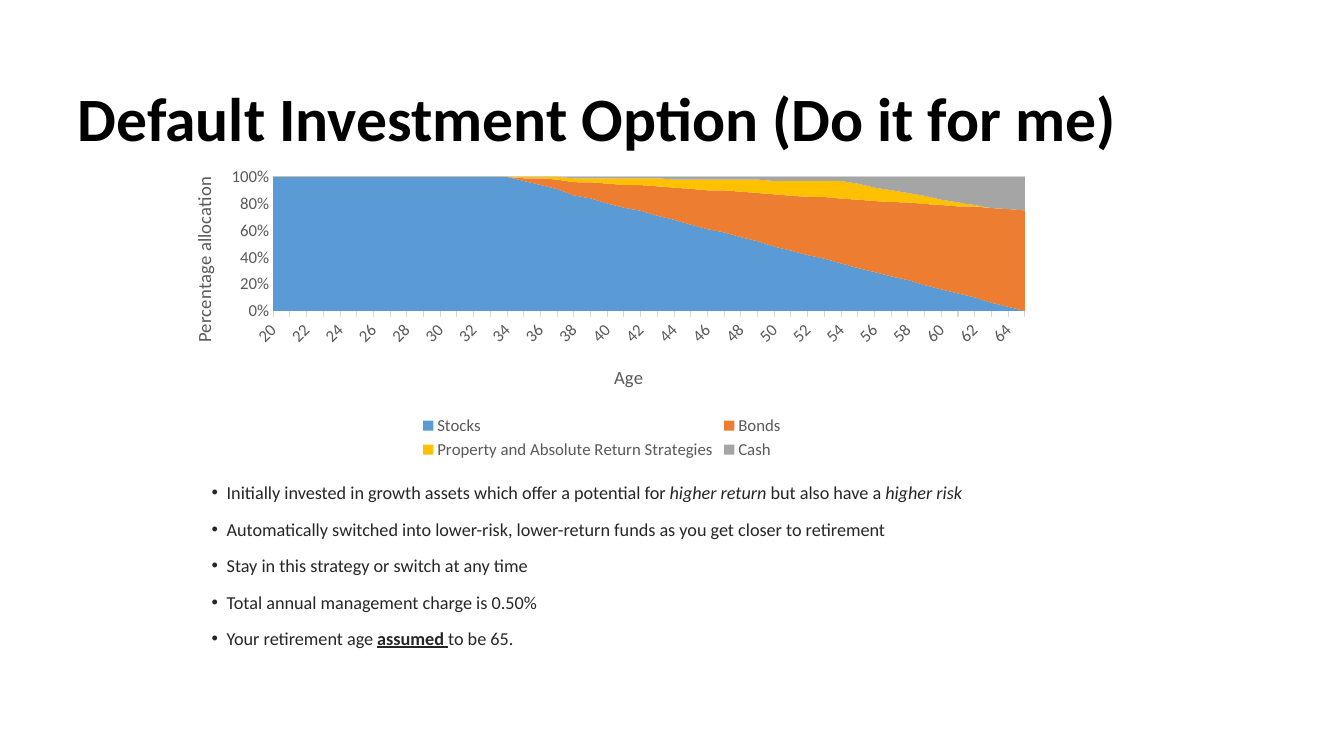
"""Build the default investment option slide: title, allocation chart and bullets."""
from lxml import etree
from pptx import Presentation
from pptx.chart.data import CategoryChartData as Data
from pptx.dml.color import RGBColor
from pptx.enum.chart import XL_CHART_TYPE as Kind, XL_LEGEND_POSITION as Spot, XL_TICK_MARK as Tick
from pptx.enum.text import MSO_ANCHOR as Anchor, MSO_AUTO_SIZE as Fit, PP_ALIGN as Align
from pptx.oxml import parse_xml
from pptx.oxml.ns import nsdecls, qn
from pptx.util import Inches, Pt


def style(font, size, color, bold=False):
    """Set the face, size, colour and weight of a font."""
    font.name, font.size, font.bold = "Calibri", Pt(size), bold
    font.color.rgb = RGBColor.from_string(color)


def place(node, index, **share):
    """Fix a chart part at shares of the chart's size."""
    for old in node.findall(qn("c:layout")):
        node.remove(old)
    inner = '<c:layoutTarget val="inner"/>' if "w" in share else ""
    modes = "".join(f'<c:{key}Mode val="edge"/>' for key in share if key in "xy")
    sizes = "".join(f'<c:{key} val="{val}"/>' for key, val in share.items())
    node.insert(index, parse_xml(
        f'<c:layout {nsdecls("c")}><c:manualLayout>{inner}{modes}{sizes}</c:manualLayout></c:layout>'))


deck = Presentation()
deck.slide_width, deck.slide_height = Inches(13.33), Inches(7.5)
slide = deck.slides.add_slide(deck.slide_layouts[5])

title = slide.shapes.title
title.left, title.top, title.width, title.height = map(Inches, (0.67, 0.83, 12, 0.52))
frame = title.text_frame
frame.auto_size, frame.vertical_anchor, frame.word_wrap = Fit.NONE, Anchor.TOP, True
para = frame.paragraphs[0]
para.alignment, para.line_spacing = Align.LEFT, 0.9
run = para.add_run()
run.text = "Default Investment Option (Do it for me)"
style(run.font, 44, "000000", True)

funds = [
    ("Stocks", "5B9BD5", [100] * 15 + [
        97, 94, 90, 87, 84, 81, 77, 74, 71, 68, 65, 61, 58, 55, 52, 48,
        45, 42, 39, 35, 32, 29, 26, 23, 19, 16, 13, 10, 6, 3, 0]),
    ("Bonds", "ED7D31", [0] * 15 + [
        2, 5, 7, 10, 12, 15, 17, 19, 22, 24, 27, 29, 31, 34, 36, 39,
        41, 44, 46, 48, 51, 53, 56, 58, 60, 63, 65, 68, 70, 73, 75]),
    ("Property and Absolute Return Strategies", "FFC000", [0] * 15 + [
        1, 1, 2, 3, 3, 4, 5, 5, 6, 6, 7, 8, 8, 9, 10, 10,
        11, 12, 12, 13, 12, 10, 9, 7, 6, 4, 3, 1, 0, 0, 0]),
    ("Cash", "A5A5A5", [0] * 18 + [
        1, 1, 1, 1, 1, 1, 2, 2, 2, 2, 2, 2, 3,
        3, 3, 3, 3, 5, 8, 10, 12, 14, 17, 19, 21, 23, 24, 25]),
]
data = Data()
data.categories = [str(age) for age in range(20, 66)]
for name, color, vals in funds:
    data.add_series(name, vals)
chart = slide.shapes.add_chart(
    Kind.AREA_STACKED_100, *map(Inches, (1.6, 1.6, 8.74, 3)), data).chart
chart.has_title = False
style(chart.font, 10, "000000")
for part, (name, color, vals) in zip(chart.plots[0].series, funds):
    part.format.fill.solid()
    part.format.fill.fore_color.rgb = RGBColor.from_string(color)

ages, shares = chart.category_axis, chart.value_axis
for axis, label, left, top in ((ages, "Age", 0.51, 0.66),
                               (shares, "Percentage allocation", 0.03, 0.04)):
    style(axis.tick_labels.font, 12, "595959")
    axis.minor_tick_mark = Tick.NONE
    run = axis.axis_title.text_frame.paragraphs[0].add_run()
    run.text = label
    style(run.font, 13.3, "595959")
    place(axis.axis_title._element, 1, x=left, y=top)
shares.axis_title.text_frame._txBody.bodyPr.set("rot", "-5400000")

ages.major_tick_mark, shares.major_tick_mark = Tick.OUTSIDE, Tick.NONE
ages.has_major_gridlines, shares.has_major_gridlines = False, True
for line in (ages.format.line, shares.major_gridlines.format.line):
    line.color.rgb = RGBColor.from_string("D9D9D9")
    line.width = Pt(0.75)
shares.format.line.fill.background()
shares.minimum_scale, shares.maximum_scale, shares.major_unit = 0, 1, 0.2
shares.tick_labels.number_format, shares.tick_labels.number_format_is_linked = "0%", False
ages._element.find(qn("c:txPr")).find(qn("a:bodyPr")).set("rot", "-2700000")
skip = parse_xml(f'<c:tickLblSkip {nsdecls("c")} val="2"/>')
ages._element.find(qn("c:noMultiLvlLbl")).addprevious(skip)

chart.has_legend = True
chart.legend.position, chart.legend.include_in_layout = Spot.BOTTOM, False
style(chart.legend.font, 12, "595959")
place(chart._chartSpace.chart.plotArea, 0, x=0.127, y=0.052, w=0.853, h=0.443)

points = [
    [("Initially invested in growth assets which offer a potential for ", ""),
     ("higher return", "i"), (" but also have a ", ""), ("higher risk", "i")],
    [("Automatically switched into lower-risk, lower-return funds as you get closer to retirement", "")],
    [("Stay in this strategy or switch at any time", "")],
    [("Total annual management charge is 0.50%", "")],
    [("Your retirement age ", ""), ("assumed ", "bu"), ("to be 65.", "")],
]
frame = slide.shapes.add_textbox(*map(Inches, (2, 4.62, 8.74, 1.92))).text_frame
frame.word_wrap, frame.auto_size = True, Fit.SHAPE_TO_FIT_TEXT
for row, point in enumerate(points):
    para = frame.add_paragraph() if row else frame.paragraphs[0]
    para.line_spacing, para.space_before = 1.5, Pt(2.6)
    props = para._p.get_or_add_pPr()
    props.set("marL", str(Inches(0.15)))
    props.set("indent", str(-Inches(0.15)))
    etree.SubElement(props, qn("a:buFont")).set("typeface", "Arial")
    etree.SubElement(props, qn("a:buChar")).set("char", "•")
    for text, marks in point:
        run = para.add_run()
        run.text = text
        style(run.font, 13, "262626", "b" in marks)
        run.font.italic, run.font.underline = "i" in marks, "u" in marks

deck.save("out.pptx")
